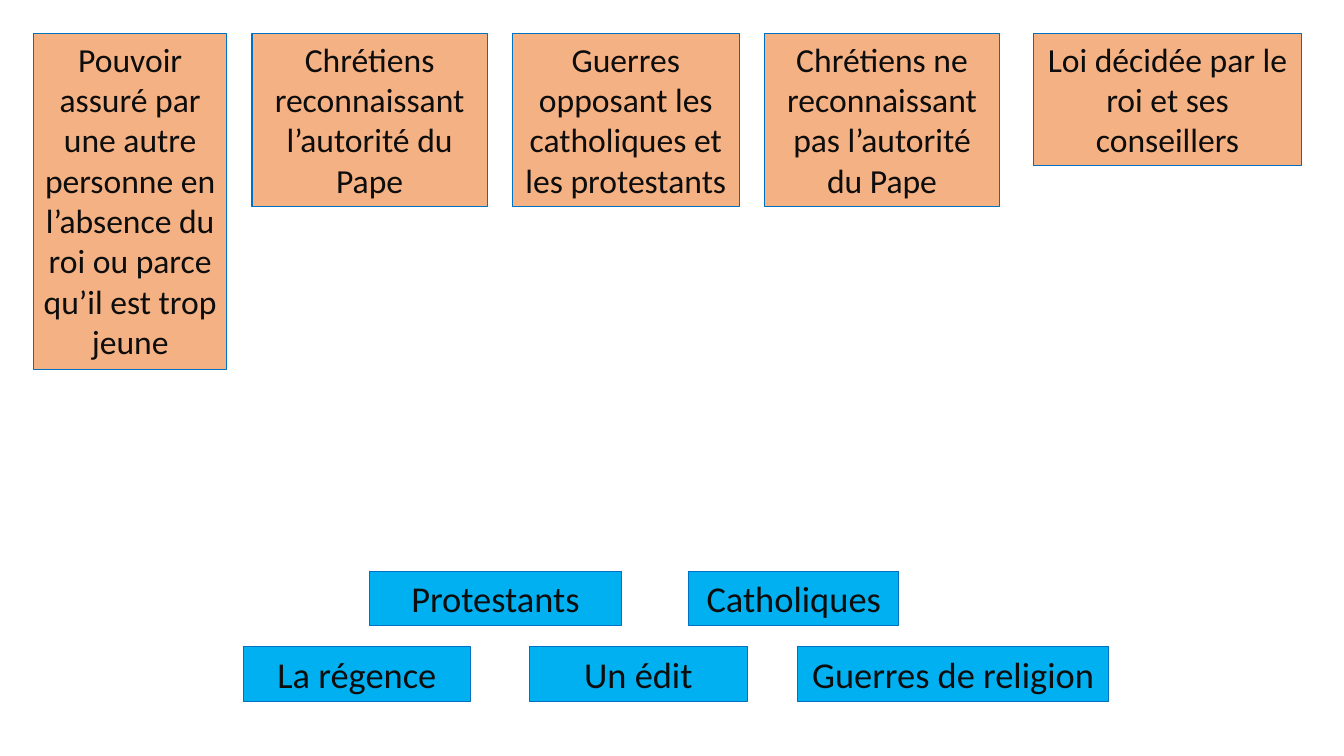
import pptx
import pptx.dml.color
import pptx.enum.shapes
import pptx.enum.text
import pptx.util

PX = 9525
HUES = {"peach": "F4B183", "sky": "00B0F0", "edge": "0070C0", "ink": "0D0D0D"}

CLUES = [
    (0, 184, 320, "Pouvoir assuré par une autre personne en l’absence du roi ou parce qu’il est trop jeune"),
    (208, 224, 165, "Chrétiens reconnaissant l’autorité du Pape"),
    (456, 216, 165, "Guerres opposant les catholiques et les protestants"),
    (696, 224, 165, "Chrétiens ne reconnaissant pas l’autorité du Pape"),
    (952, 256, 126, "Loi décidée par le roi et ses conseillers"),
]
FAITHS = [(0, 240, 52, "Protestants"), (304, 200, 52, "Catholiques")]
EVENTS = [
    (0, 216, 52, "La régence"),
    (272, 208, 52, "Un édit"),
    (528, 296, 52, "Guerres de religion"),
]


def tint(name):
    """Return the named colour."""
    return pptx.dml.color.RGBColor.from_string(HUES[name])


def write(frame, text, size=24, font="Calibri", color="ink"):
    """Fill a text frame with one centred paragraph."""
    frame.word_wrap = True
    frame.auto_size = pptx.enum.text.MSO_AUTO_SIZE.SHAPE_TO_FIT_TEXT
    frame.vertical_anchor = pptx.enum.text.MSO_ANCHOR.TOP
    para = frame.paragraphs[0]
    para.alignment = pptx.enum.text.PP_ALIGN.CENTER
    run = para.add_run()
    run.text = text
    run.font.size = pptx.util.Pt(size)
    run.font.name = font
    run.font.color.rgb = tint(color)


def draw_row(slide, box, cards, fill, size):
    """Place a row of cards from the left and top of its box."""
    left, top = box
    for shift, width, height, text in cards:
        card = slide.shapes.add_shape(
            pptx.enum.shapes.MSO_SHAPE.RECTANGLE,
            (left + shift) * PX, top * PX, width * PX, height * PX)
        card.shadow.inherit = False
        card.fill.solid()
        card.fill.fore_color.rgb = tint(fill)
        card.line.color.rgb = tint("edge")
        card.line.width = pptx.util.Pt(0.75)
        write(card.text_frame, text, size=size)


def main():
    """Build and save the slide."""
    deck = pptx.Presentation()
    deck.slide_width, deck.slide_height = 1280 * PX, 720 * PX
    slide = deck.slides.add_slide(deck.slide_layouts[6])
    draw_row(slide, (32, 32), CLUES, "peach", 24)
    draw_row(slide, (352, 544), FAITHS, "sky", 26)
    draw_row(slide, (232, 616), EVENTS, "sky", 26)
    deck.save("out.pptx")


if __name__ == "__main__":
    main()
